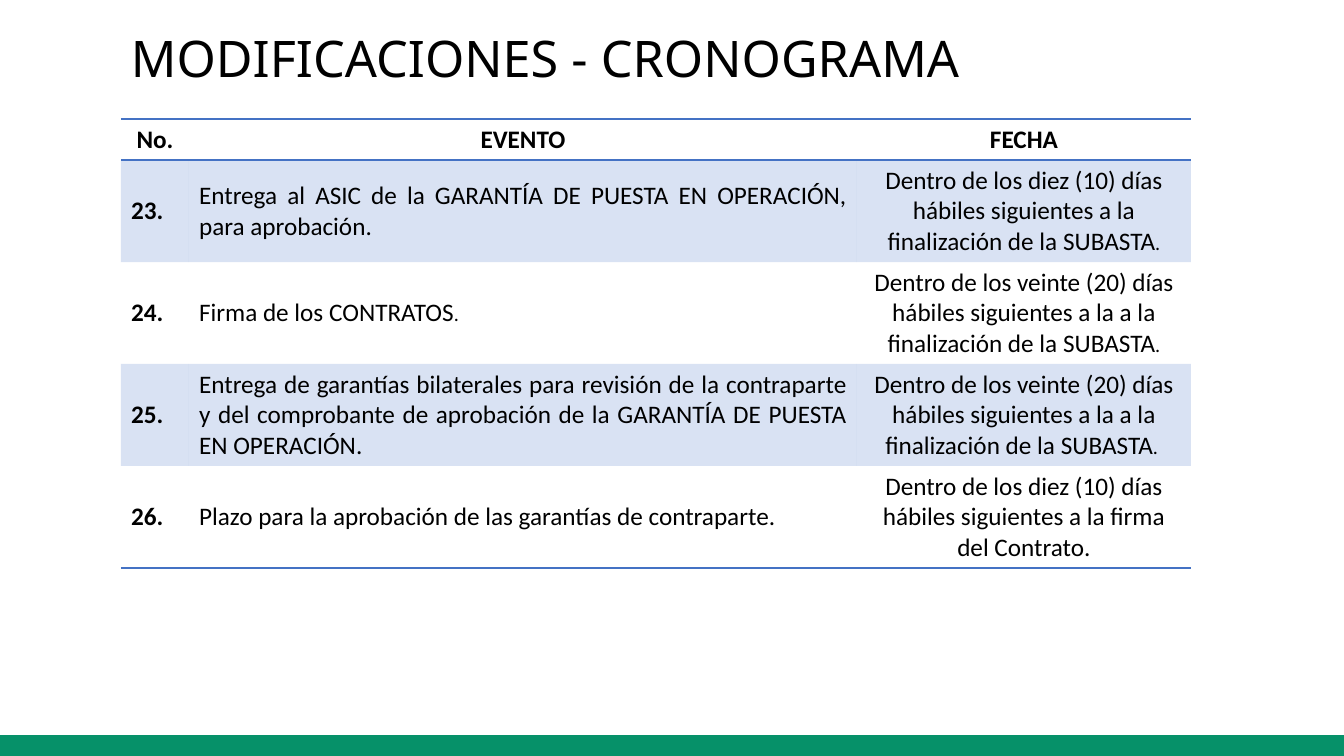
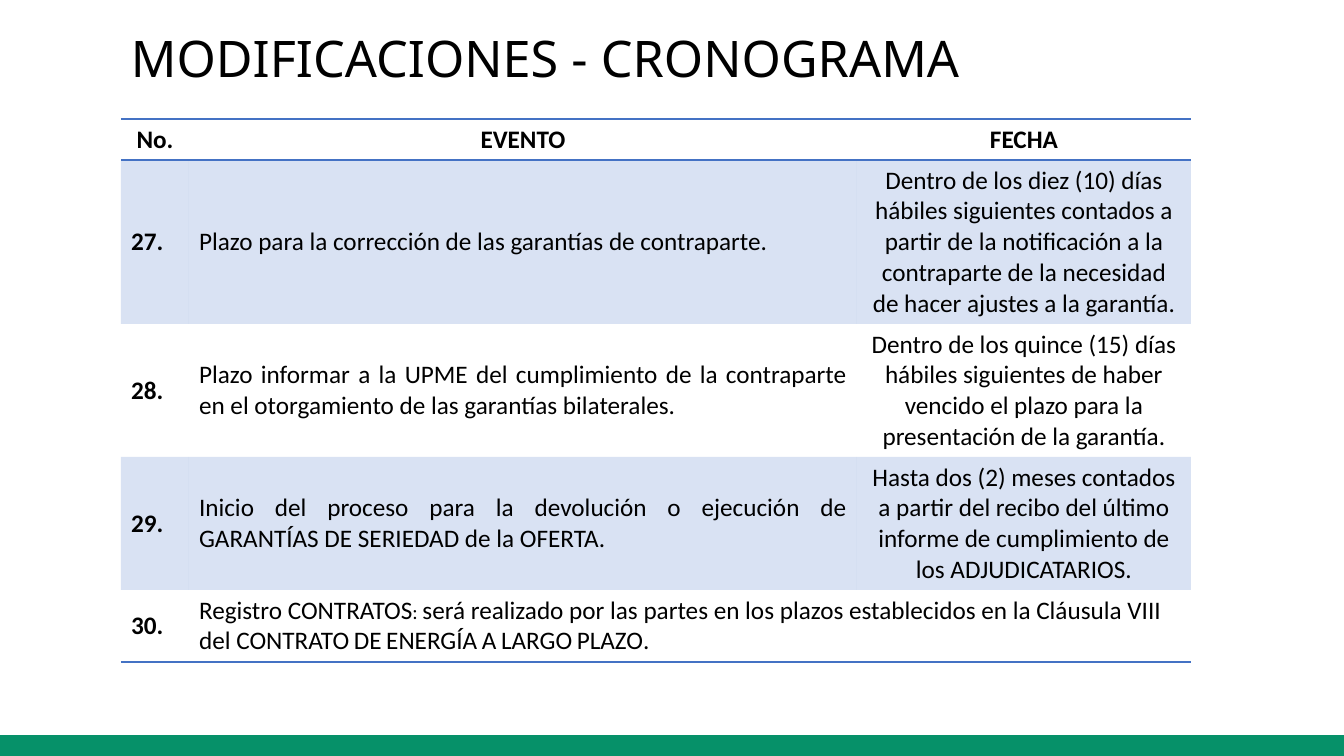
"""Build the two schedule slides and save them as a presentation."""
from dataclasses import dataclass

from lxml.etree import SubElement
from pptx import Presentation
from pptx.dml.color import RGBColor
from pptx.enum.shapes import MSO_SHAPE
from pptx.enum.text import MSO_ANCHOR, PP_ALIGN
from pptx.oxml.ns import qn
from pptx.slide import Slide
from pptx.table import Table, _Cell
from pptx.text.text import _Paragraph
from pptx.util import Emu, Pt

SCALE = 914400 / 100.8
WIDE, HIGH = 1344, 756
LEFT = 121
GREEN, BLUE, BLACK = "069169", "4472C4", "000000"
TINT = 20
PLAIN_STYLE = "{2D5ABB26-0587-4C30-8999-92F81FD0307C}"
COLS = (68, 668, 334)
HEADS = ("No.", "EVENTO", "FECHA")
HEAD_HIGH = 41
TITLE = "MODIFICACIONES - CRONOGRAMA"
TITLE_FONT = {"name": "Noto Sans", "size": Pt(36)}
CELL_FONT = {"name": "Calibri", "size": Pt(18)}
ALIGNS = (PP_ALIGN.LEFT, PP_ALIGN.JUSTIFY, PP_ALIGN.CENTER)


@dataclass(frozen=True)
class Event:
    """One table row; text between tildes is in small capitals."""
    number: str
    event: str
    date: str
    high: int


PAGES = (
    (
        Event("23.", "Entrega al ASIC de la GARANTÍA DE PUESTA EN OPERACIÓN, para aprobación.",
              "Dentro de los diez (10) días hábiles siguientes a la finalización de la ~SUBASTA.~", 102),
        Event("24.", "Firma de los ~CONTRATOS.~",
              "Dentro de los veinte (20) días hábiles siguientes a la a la finalización de la ~SUBASTA.~", 102),
        Event("25.", "Entrega de garantías bilaterales para revisión de la contraparte y del "
              "comprobante de aprobación de la GARANTÍA DE PUESTA EN OPERACIÓN.",
              "Dentro de los veinte (20) días hábiles siguientes a la a la finalización de la ~SUBASTA. ~", 102),
        Event("26.", "Plazo para la aprobación de las garantías de contraparte.",
              "Dentro de los diez (10) días hábiles siguientes a la firma del Contrato.", 102),
    ),
    (
        Event("27.", "Plazo para la corrección de las garantías de contraparte.",
              "Dentro de los diez (10) días hábiles siguientes contados a partir de la notificación "
              "a la contraparte de la necesidad de hacer ajustes a la garantía.", 164),
        Event("28.", "Plazo informar a la UPME del cumplimiento de la contraparte en el "
              "otorgamiento de las garantías bilaterales.",
              "Dentro de los quince (15) días hábiles siguientes de haber vencido el plazo para la "
              "presentación de la garantía.", 133),
        Event("29.", "Inicio del proceso para la devolución o ejecución de GARANTÍAS DE SERIEDAD "
              "de la OFERTA.",
              "Hasta dos (2) meses contados a partir del recibo del último informe de cumplimiento "
              "de los ADJUDICATARIOS.", 133),
        Event("30.", "Registro ~CONTRATOS: ~será realizado por las partes en los plazos establecidos "
              "en la Cláusula VIII del ~CONTRATO DE ENERGÍA A LARGO PLAZO~.", "", 72),
    ),
)


def px(count: int) -> Emu:
    """Turn pixels into EMU."""
    return Emu(round(count * SCALE))


def color(code: str) -> RGBColor:
    """Turn a hex string into a colour."""
    return RGBColor.from_string(code)


def apply(target: object, values: dict) -> None:
    """Set each format value on the target."""
    for name, value in values.items():
        setattr(target, name, value)


def write(para: _Paragraph, text: str, font: dict) -> None:
    """Add the runs of a text, with small capitals between tildes."""
    for place, part in enumerate(text.split("~")):
        if not part:
            continue
        run = para.add_run()
        run.text = part
        apply(run.font, font)
        run.font.color.rgb = color(BLACK)
        if place % 2:
            run.font._element.set("cap", "small")


def rule(cell: _Cell, side: str) -> None:
    """Draw a one-point border on one side of a cell."""
    line = SubElement(cell._tc.get_or_add_tcPr(), qn(f"a:ln{side}"), w=str(Pt(1)))
    fill = SubElement(line, qn("a:solidFill"))
    SubElement(fill, qn("a:srgbClr"), val=BLUE)


def shade(cell: _Cell, band: bool) -> None:
    """Give a cell the pale band fill, or none."""
    if not band:
        cell.fill.background()
        return
    cell.fill.solid()
    cell.fill.fore_color.rgb = color(BLUE)
    tone = cell._tc.tcPr.find(qn("a:solidFill")).find(qn("a:srgbClr"))
    SubElement(tone, qn("a:alpha"), val=str(TINT * 1000))


def fill_row(table: Table, row: int, texts: tuple, last: int) -> None:
    """Write and format one row of the table."""
    head = row == 0
    span = not texts[2]
    for col, text in enumerate(texts):
        cell = table.cell(row, col)
        cell.vertical_anchor = MSO_ANCHOR.MIDDLE
        for side, shown in {"T": head, "B": head or row == last}.items():
            if shown:
                rule(cell, side)
        shade(cell, row % 2 == 1)
        para = cell.text_frame.paragraphs[0]
        para.alignment = PP_ALIGN.CENTER if head else PP_ALIGN.LEFT if span else ALIGNS[col]
        write(para, text, {**CELL_FONT, "bold": head or col == 0})
    if span:
        table.cell(row, 1).merge(table.cell(row, 2))


def add_frame(slide: Slide) -> None:
    """Draw the green band and the title."""
    band = slide.shapes.add_shape(MSO_SHAPE.RECTANGLE, 0, px(736), px(WIDE), px(20))
    band.shadow.inherit = False
    band.fill.solid()
    band.fill.fore_color.rgb = color(GREEN)
    band.line.color.rgb = color(GREEN)
    band.line.width = Pt(1)
    box = slide.shapes.add_textbox(px(LEFT), px(33), px(1019), px(70))
    apply(box.text_frame, {"word_wrap": True, "margin_top": px(1),
                           "vertical_anchor": MSO_ANCHOR.TOP})
    para = box.text_frame.paragraphs[0]
    para.line_spacing = 0.9
    write(para, TITLE, TITLE_FONT)


def add_grid(slide: Slide, events: tuple[Event, ...]) -> None:
    """Draw the table of events."""
    highs = (HEAD_HIGH, *(item.high for item in events))
    frame = slide.shapes.add_table(len(highs), len(COLS), px(LEFT), px(119),
                                   px(sum(COLS)), px(sum(highs)))
    table = frame.table
    apply(table, {"first_row": False, "horz_banding": False})
    table._tbl.tblPr.find(qn("a:tableStyleId")).text = PLAIN_STYLE
    for col, wide in zip(table.columns, COLS):
        col.width = px(wide)
    for row, high in zip(table.rows, highs):
        row.height = px(high)
    rows = (HEADS, *((item.number, item.event, item.date) for item in events))
    for row, texts in enumerate(rows):
        fill_row(table, row, texts, len(events))


def main() -> None:
    """Build and save the slides."""
    deck = Presentation()
    apply(deck, {"slide_width": px(WIDE), "slide_height": px(HIGH)})
    for events in PAGES:
        slide = deck.slides.add_slide(deck.slide_layouts[6])
        add_frame(slide)
        add_grid(slide, events)
    deck.save("out.pptx")


if __name__ == "__main__":
    main()
